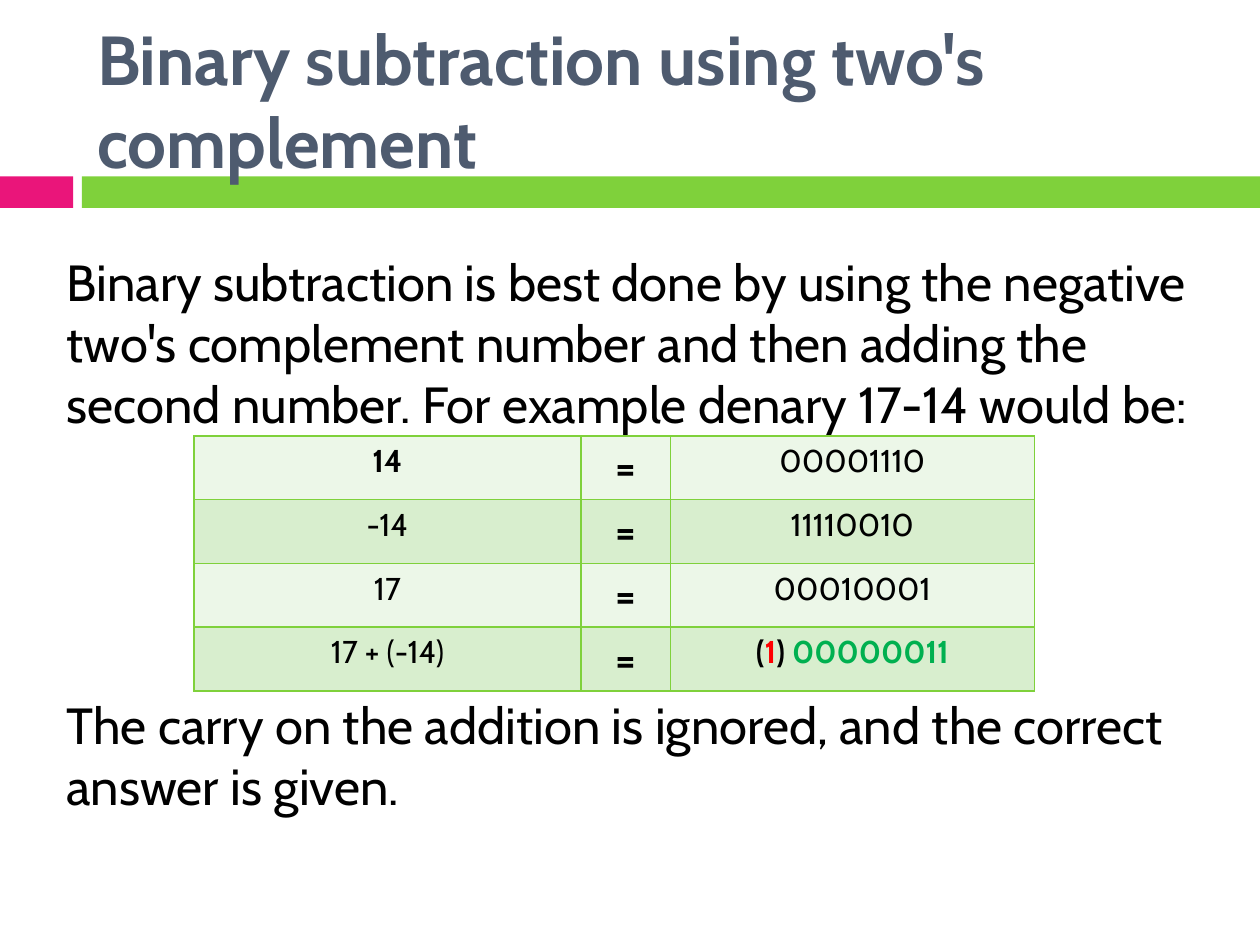
import dataclasses
import typing

import lxml.etree
import pptx
import pptx.dml.color
import pptx.enum.shapes
import pptx.enum.text
import pptx.oxml.ns
import pptx.util

Inches = pptx.util.Inches
Align = pptx.enum.text.PP_ALIGN
Anchor = pptx.enum.text.MSO_ANCHOR


@dataclasses.dataclass(frozen=True)
class Theme:
    """Colours, font and type sizes of the slide."""

    font: str = "Cabin"
    pink: str = "EA157A"
    green: str = "7FD13B"
    slate: str = "4E5B6F"
    black: str = "000000"
    red: str = "FF0000"
    leaf: str = "00B050"
    bands: tuple[str, str] = ("ECF7E8", "D8EECE")
    head: float = 39.6
    body: float = 29
    sign: float = 24
    cell: float = 18


THEME = Theme()


class Bar(typing.NamedTuple):
    """A plain block in the band under the title."""

    left: float
    width: float
    fill: str


class Part(typing.NamedTuple):
    """A piece of cell text in one colour."""

    text: str
    tint: str = THEME.black


class Sum(typing.NamedTuple):
    """A table row: a number and its binary form."""

    name: str
    bits: tuple[Part, ...]
    bold_name: bool = False
    bold_bits: bool = False


BARS = (Bar(0, 0.58, THEME.pink), Bar(0.65, 9.35, THEME.green))
SUMS = (
    Sum("14", (Part("00001110"),), bold_name=True),
    Sum("-14", (Part("11110010"),)),
    Sum("17", (Part("00010001"),)),
    Sum(
        "17 + (-14)",
        (Part("("), Part("1", THEME.red), Part(") "), Part("00000011", THEME.leaf)),
        bold_bits=True,
    ),
)
COLS = (3.07, 0.71, 2.89)
ROW = 0.506
TITLE = "Binary subtraction using two's complement"
INTRO = (
    "Binary subtraction is best done by using the negative two's complement "
    "number and then adding the second number. For example denary 17-14 would be:"
)
CLOSE = "The carry on the addition is ignored, and the correct answer is given."


def rgb(code: str) -> pptx.dml.color.RGBColor:
    """Turn a hex code into a colour."""
    return pptx.dml.color.RGBColor.from_string(code)


def style(para, size: float, tint: str = THEME.black, bold: bool = False) -> None:
    """Set the font of a paragraph."""
    font = para.font
    font.name, font.size, font.bold = THEME.font, pptx.util.Pt(size), bold
    font.color.rgb = rgb(tint)


def draw_bar(slide, bar: Bar) -> None:
    """Draw one block of the band."""
    rect = pptx.enum.shapes.MSO_SHAPE.RECTANGLE
    shape = slide.shapes.add_shape(
        rect, Inches(bar.left), Inches(1.4), Inches(bar.width), Inches(0.25)
    )
    shape.shadow.inherit = False
    shape.fill.solid()
    shape.fill.fore_color.rgb = rgb(bar.fill)
    shape.line.fill.background()


def draw_title(slide) -> None:
    """Place and format the title."""
    title = slide.shapes.title
    title.left, title.top = Inches(0.67), Inches(0.25)
    title.width, title.height = Inches(9.07), Inches(1.08)
    frame = title.text_frame
    frame.text = TITLE
    frame.auto_size = pptx.enum.text.MSO_AUTO_SIZE.NONE
    frame.vertical_anchor = Anchor.MIDDLE
    para = frame.paragraphs[0]
    para.alignment = Align.LEFT
    style(para, THEME.head, THEME.slate, bold=True)


def draw_body(slide) -> None:
    """Write the text above and below the table."""
    box = slide.shapes.add_textbox(Inches(0.43), Inches(1.94), Inches(9.31), Inches(4.7))
    frame = box.text_frame
    frame.word_wrap = True
    frame.text = f"{INTRO}\n{CLOSE}"
    for para in frame.paragraphs:
        style(para, THEME.body)
    frame.paragraphs[1].space_before = pptx.util.Pt(149)


def edge(cell) -> None:
    """Give a cell a thin green border."""
    props = cell._tc.get_or_add_tcPr()
    name = pptx.oxml.ns.qn
    for place, side in enumerate(("a:lnL", "a:lnR", "a:lnT", "a:lnB")):
        line = lxml.etree.Element(name(side), w=str(pptx.util.Pt(1)))
        fill = lxml.etree.SubElement(line, name("a:solidFill"))
        lxml.etree.SubElement(fill, name("a:srgbClr"), val=THEME.green)
        props.insert(place, line)


def fill_cell(
    cell, parts: tuple[Part, ...], size: float, bold: bool, band: str
) -> None:
    """Write and colour one table cell."""
    cell.fill.solid()
    cell.fill.fore_color.rgb = rgb(band)
    edge(cell)
    para = cell.text_frame.paragraphs[0]
    para.alignment = Align.CENTER
    style(para, size, bold=bold)
    for part in parts:
        run = para.add_run()
        run.text = part.text
        if part.tint != THEME.black:
            run.font.color.rgb = rgb(part.tint)


def draw_table(slide) -> None:
    """Draw the table of sums."""
    table = slide.shapes.add_table(
        len(SUMS), len(COLS), Inches(1.54), Inches(3.46),
        Inches(sum(COLS)), Inches(ROW * len(SUMS)),
    ).table
    table.first_row = table.horz_banding = False
    for col, width in zip(table.columns, COLS):
        col.width = Inches(width)
    for at, item in enumerate(SUMS):
        band = THEME.bands[at % 2]
        name, sign, bits = table.rows[at].cells
        fill_cell(name, (Part(item.name),), THEME.cell, item.bold_name, band)
        fill_cell(sign, (Part("="),), THEME.sign, True, band)
        fill_cell(bits, item.bits, THEME.cell, item.bold_bits, band)


def main() -> None:
    """Build and save the slide."""
    deck = pptx.Presentation()
    deck.slide_width, deck.slide_height = Inches(10), Inches(7.5)
    slide = deck.slides.add_slide(deck.slide_layouts[5])
    for bar in BARS:
        draw_bar(slide, bar)
    title = slide.shapes.title._element
    title.getparent().append(title)
    draw_title(slide)
    draw_body(slide)
    draw_table(slide)
    deck.save("out.pptx")


if __name__ == "__main__":
    main()
